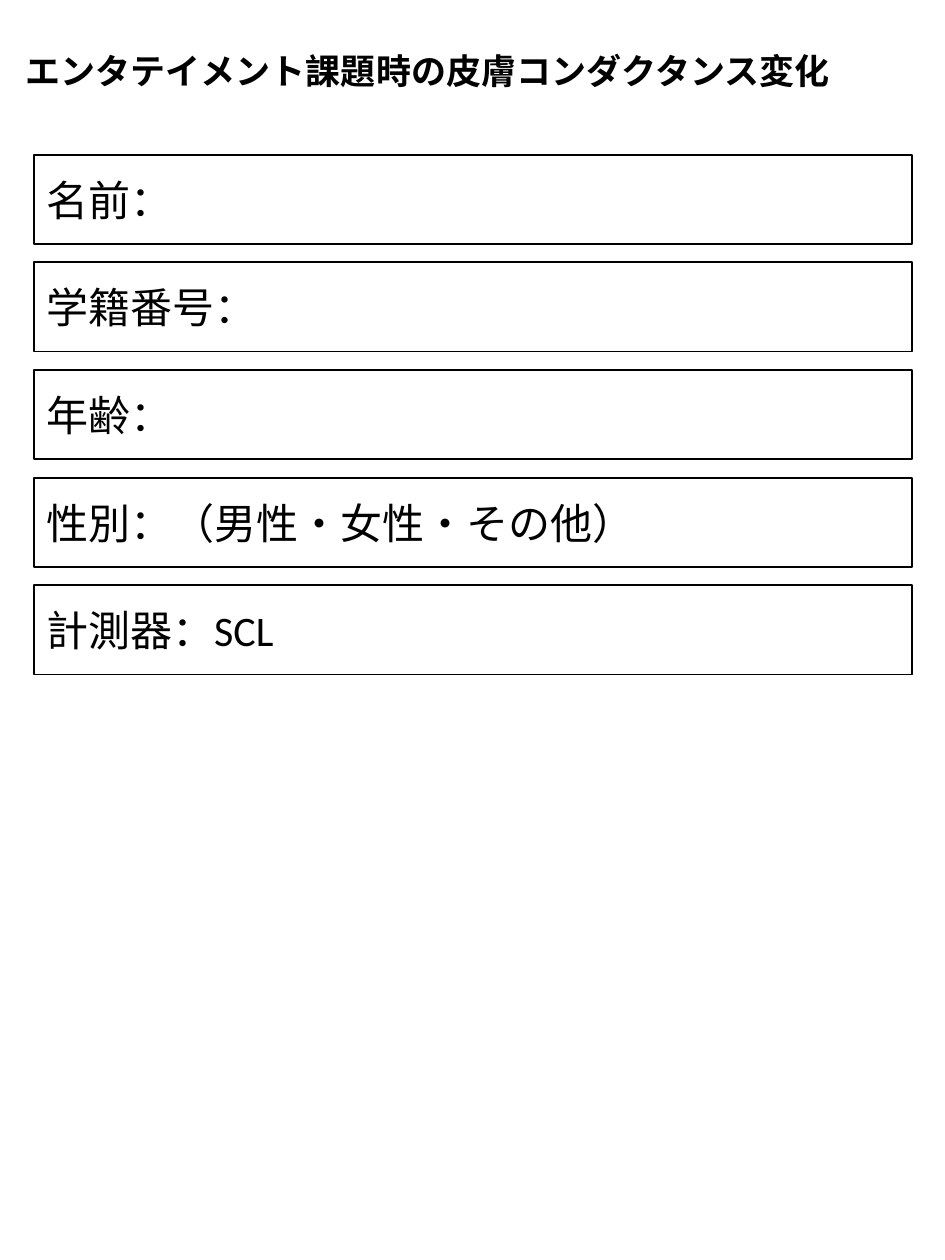
from pptx import Presentation
from pptx.dml.color import RGBColor
from pptx.enum.shapes import MSO_SHAPE
from pptx.enum.text import MSO_ANCHOR, MSO_AUTO_SIZE, PP_ALIGN
from pptx.util import Cm, Pt

RECTANGLE = MSO_SHAPE.RECTANGLE
LEFT = PP_ALIGN.LEFT
TOP = MSO_ANCHOR.TOP
MIDDLE = MSO_ANCHOR.MIDDLE
GROW = MSO_AUTO_SIZE.SHAPE_TO_FIT_TEXT
COLORS = {"ink": "000000", "paper": "FFFFFF"}
FONT = "Calibri"
FIELDS = ["名前：", "学籍番号：", "年齢：", "性別：（男性・女性・その他）", "計測器：SCL"]
FIRST_TOP = 3.12
PITCH = 2.17


def add_text(shape, text, size, bold):
    para = shape.text_frame.paragraphs[0]
    para.alignment = LEFT
    span = para.add_run()
    span.text = text
    span.font.name = FONT
    span.font.size = Pt(size)
    span.font.bold = bold
    span.font.color.rgb = RGBColor.from_string(COLORS["ink"])


deck = Presentation()
deck.slide_width = Cm(19.05)
deck.slide_height = Cm(25.4)
page = deck.slides.add_slide(deck.slide_layouts[5])
page.background.fill.solid()
page.background.fill.fore_color.rgb = RGBColor.from_string(COLORS["paper"])

title = page.shapes.title
title.left, title.top = Cm(0.26), Cm(0.87)
title.width, title.height = Cm(16.9), Cm(1.11)
title.text_frame.word_wrap = False
title.text_frame.auto_size = GROW
title.text_frame.vertical_anchor = TOP
add_text(title, "エンタテイメント課題時の皮膚コンダクタンス変化", 20, True)

for row, label in enumerate(FIELDS):
    box = page.shapes.add_shape(
        RECTANGLE, Cm(0.68), Cm(FIRST_TOP + row * PITCH), Cm(17.7), Cm(1.8)
    )
    box.shadow.inherit = False
    box.fill.solid()
    box.fill.fore_color.rgb = RGBColor.from_string(COLORS["paper"])
    box.line.color.rgb = RGBColor.from_string(COLORS["ink"])
    box.line.width = Pt(1)
    box.text_frame.word_wrap = True
    box.text_frame.vertical_anchor = MIDDLE
    add_text(box, label, 24, False)

deck.save("out.pptx")
